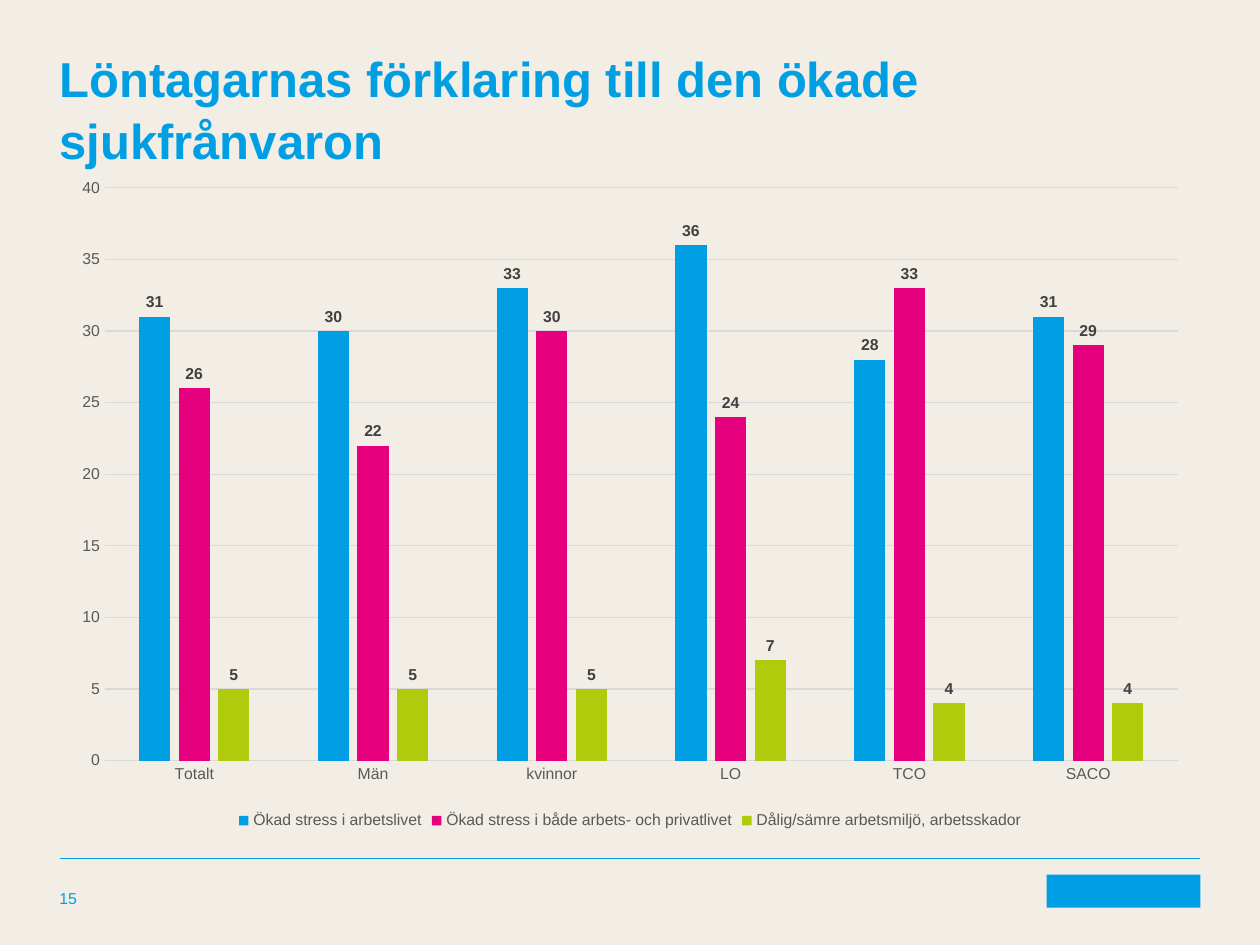
from lxml import etree
from pptx import Presentation
from pptx.chart.data import CategoryChartData
from pptx.dml.color import RGBColor
from pptx.enum.chart import XL_CHART_TYPE, XL_LABEL_POSITION, XL_LEGEND_POSITION, XL_TICK_MARK
from pptx.enum.shapes import MSO_CONNECTOR, MSO_SHAPE
from pptx.enum.text import MSO_ANCHOR, MSO_AUTO_SIZE, PP_ALIGN
from pptx.oxml.ns import qn
from pptx.util import Cm, Pt

COLUMN_CLUSTERED = XL_CHART_TYPE.COLUMN_CLUSTERED
OUTSIDE_END = XL_LABEL_POSITION.OUTSIDE_END
LEGEND_BOTTOM = XL_LEGEND_POSITION.BOTTOM
NO_TICK = XL_TICK_MARK.NONE
STRAIGHT = MSO_CONNECTOR.STRAIGHT
RECTANGLE = MSO_SHAPE.RECTANGLE
TOP, BOTTOM = MSO_ANCHOR.TOP, MSO_ANCHOR.BOTTOM
NO_AUTOFIT = MSO_AUTO_SIZE.NONE
LEFT = PP_ALIGN.LEFT

BACKGROUND = RGBColor(0xF2, 0xEE, 0xE6)
BLUE = RGBColor(0x00, 0x9F, 0xE4)
PINK = RGBColor(0xE6, 0x00, 0x7E)
GREEN = RGBColor(0xB0, 0xCB, 0x0B)
GRID_GREY = RGBColor(0xD9, 0xD9, 0xD9)
AXIS_GREY = RGBColor(0x59, 0x59, 0x59)
LABEL_GREY = RGBColor(0x40, 0x40, 0x40)

FONT = "Arial"
MARGIN = Cm(1.2)
CONTENT_WIDTH = Cm(23)
CATEGORIES = ["Totalt", "Män", "kvinnor", "LO", "TCO", "SACO"]
SERIES = [
    ("Ökad stress i arbetslivet", [31, 30, 33, 36, 28, 31], BLUE),
    ("Ökad stress i både arbets- och privatlivet", [26, 22, 30, 24, 33, 29], PINK),
    ("Dålig/sämre arbetsmiljö, arbetsskador", [5, 5, 5, 7, 4, 4], GREEN),
]


def style_font(font, size, color, bold=False):
    font.name = FONT
    font.size = Pt(size)
    font.bold = bold
    font.color.rgb = color


def style_line(line, color, width):
    line.color.rgb = color
    line.width = Pt(width)


def fill_text(shape, text, size, anchor, bold=False):
    frame = shape.text_frame
    frame.word_wrap = True
    frame.auto_size = NO_AUTOFIT
    frame.vertical_anchor = anchor
    frame.margin_left = frame.margin_right = 0
    frame.margin_top = frame.margin_bottom = 0
    paragraph = frame.paragraphs[0]
    paragraph.alignment = LEFT
    run = paragraph.add_run()
    run.text = text
    style_font(run.font, size, BLUE, bold)
    return paragraph


def add_title(slide, text):
    title = slide.shapes.title
    title.left, title.top = MARGIN, Cm(0.92)
    title.width, title.height = CONTENT_WIDTH, Cm(4.2)
    paragraph = fill_text(title, text, 28, TOP, bold=True)
    paragraph.line_spacing = 1.05


def add_rule(slide, top):
    rule = slide.shapes.add_connector(STRAIGHT, MARGIN, top, MARGIN + CONTENT_WIDTH, top)
    style_line(rule.line, BLUE, 0.5)
    etree.SubElement(rule.element.spPr, qn("a:effectLst"))


def add_page_number(slide, number):
    box = slide.shapes.add_textbox(MARGIN, Cm(17.63), Cm(6), Cm(0.67))
    fill_text(box, number, 9, BOTTOM)


def add_brand_block(slide):
    width = Cm(3.1)
    left = MARGIN + CONTENT_WIDTH - width
    block = slide.shapes.add_shape(RECTANGLE, left, Cm(17.63), width, Cm(0.67))
    block.shadow.inherit = False
    block.fill.solid()
    block.fill.fore_color.rgb = BLUE
    block.line.fill.background()


def style_axes(chart):
    category_axis, value_axis = chart.category_axis, chart.value_axis
    for axis in (category_axis, value_axis):
        axis.major_tick_mark = axis.minor_tick_mark = NO_TICK
        style_font(axis.tick_labels.font, 9, AXIS_GREY)
    style_line(category_axis.format.line, GRID_GREY, 0.75)
    value_axis.format.line.fill.background()
    value_axis.minimum_scale, value_axis.maximum_scale = 0, 40
    value_axis.major_unit = 5
    value_axis.tick_labels.number_format = "0"
    value_axis.tick_labels.number_format_is_linked = False
    style_line(value_axis.major_gridlines.format.line, GRID_GREY, 0.75)


def style_series(series, color):
    series.format.fill.solid()
    series.format.fill.fore_color.rgb = color
    labels = series.data_labels
    labels.show_value = True
    labels.position = OUTSIDE_END
    labels.number_format = "0"
    labels.number_format_is_linked = False
    style_font(labels.font, 9, LABEL_GREY, bold=True)


def add_column_chart(slide):
    data = CategoryChartData(number_format="0")
    data.categories = CATEGORIES
    for name, values, _ in SERIES:
        data.add_series(name, values)
    chart = slide.shapes.add_chart(
        COLUMN_CLUSTERED, MARGIN, Cm(3.33), CONTENT_WIDTH, Cm(13.5), data
    ).chart
    chart.has_title = False
    chart.font.name = FONT
    chart.font.size = Pt(10)
    chart.has_legend = True
    chart.legend.position = LEGEND_BOTTOM
    chart.legend.include_in_layout = False
    style_font(chart.legend.font, 9, AXIS_GREY)
    style_axes(chart)
    plot = chart.plots[0]
    plot.gap_width = 219
    plot.overlap = -27
    plot.vary_by_categories = False
    for series, (_, _, color) in zip(plot.series, SERIES):
        style_series(series, color)


def main():
    presentation = Presentation()
    presentation.slide_width, presentation.slide_height = Cm(25.4), Cm(19.05)
    slide = presentation.slides.add_slide(presentation.slide_layouts[5])
    slide.background.fill.solid()
    slide.background.fill.fore_color.rgb = BACKGROUND
    add_rule(slide, Cm(17.3))
    add_brand_block(slide)
    add_title(slide, "Löntagarnas förklaring till den ökade sjukfrånvaron")
    add_page_number(slide, "15")
    add_column_chart(slide)
    presentation.save("out.pptx")


if __name__ == "__main__":
    main()
